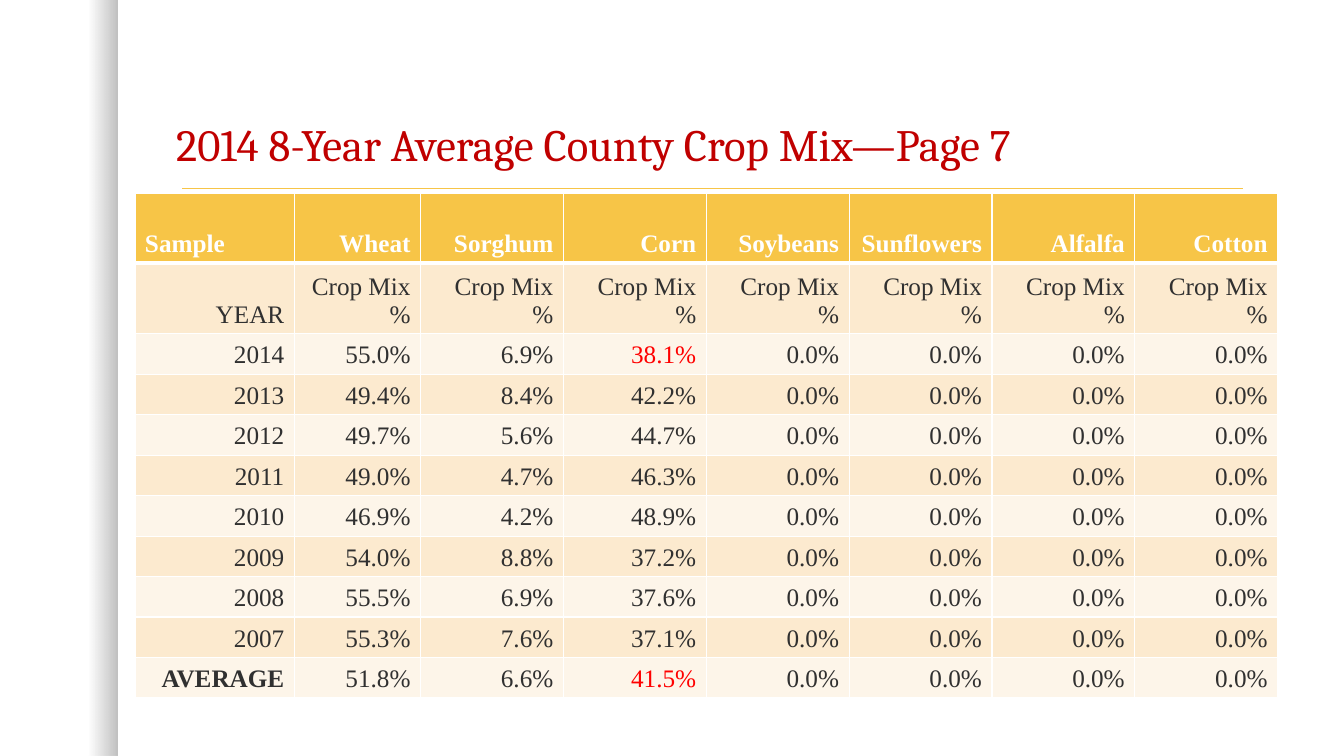
from lxml.etree import SubElement
from pptx import Presentation
from pptx.dml.color import RGBColor
from pptx.enum.shapes import MSO_CONNECTOR as Connector, MSO_SHAPE as Shape
from pptx.enum.text import MSO_ANCHOR as Anchor, PP_ALIGN as Align
from pptx.oxml.ns import qn
from pptx.util import Cm, Pt

TITLE = "2014 8-Year Average County Crop Mix—Page 7"
CROPS = ["Wheat", "Sorghum", "Corn", "Soybeans", "Sunflowers", "Alfalfa", "Cotton"]
MIXES = [
    ("2014", "55.0%", "6.9%", "38.1%"),
    ("2013", "49.4%", "8.4%", "42.2%"),
    ("2012", "49.7%", "5.6%", "44.7%"),
    ("2011", "49.0%", "4.7%", "46.3%"),
    ("2010", "46.9%", "4.2%", "48.9%"),
    ("2009", "54.0%", "8.8%", "37.2%"),
    ("2008", "55.5%", "6.9%", "37.6%"),
    ("2007", "55.3%", "7.6%", "37.1%"),
    ("AVERAGE", "51.8%", "6.6%", "41.5%"),
]
UNGROWN = ["0.0%"] * 4
ROWS = [
    ["Sample", *CROPS],
    ["YEAR"] + ["Crop Mix %"] * len(CROPS),
    *([*mix, *UNGROWN] for mix in MIXES),
]
HIGHLIGHTS = {"38.1%", "41.5%"}
BOLD_LABELS = {"AVERAGE"}

COLUMN_WIDTHS = [4.02, 3.18] + [3.6] * 6
ROW_HEIGHTS = [1.75] * 2 + [1.02] * len(MIXES)
TABLE_LEFT, TABLE_TOP = 3.4, 4.88

GOLD, CREAM, IVORY = "F7C547", "FCEACF", "FDF5E9"
WHITE, BLACK, INK, RED, CRIMSON = "FFFFFF", "000000", "303030", "FF0000", "C00000"


def color(value):
    return RGBColor.from_string(value)


def write(frame, text, size=18, font="Times New Roman", ink=INK, bold=False,
          align=Align.RIGHT, spacing=None):
    frame.word_wrap = True
    para = frame.paragraphs[0]
    para.alignment = align
    para.line_spacing = spacing
    span = para.add_run()
    span.text = text
    span.font.size = Pt(size)
    span.font.name = font
    span.font.bold = bold
    span.font.color.rgb = color(ink)


def add_borders(cell, **widths):
    properties = cell._tc.get_or_add_tcPr()
    for side, width in widths.items():
        line = SubElement(properties, qn(f"a:ln{side}"), w=str(Pt(width)))
        fill = SubElement(line, qn("a:solidFill"))
        SubElement(fill, qn("a:srgbClr"), val=WHITE)


def add_edge_shade(page):
    shade = page.shapes.add_shape(Shape.RECTANGLE, 0, 0, Cm(2.95), Cm(19.05))
    shade.shadow.inherit = False
    shade.line.fill.background()
    shade.fill.gradient()
    shade.fill.gradient_angle = 0
    for stop, position, alpha in zip(shade.fill.gradient_stops, (0.75, 1), (0, 25)):
        stop.position = position
        stop.color.rgb = color(BLACK)
    tones = shade._element.spPr.iter(qn("a:srgbClr"))
    for tone, alpha in zip(list(tones), (0, 25)):
        SubElement(tone, qn("a:alpha"), val=str(alpha * 1000))


def add_title(page):
    rule = page.shapes.add_connector(
        Connector.STRAIGHT, Cm(4.6), Cm(4.75), Cm(31.32), Cm(4.75))
    rule.line.color.rgb = color(GOLD)
    rule.line.width = Pt(1)
    SubElement(rule._element.spPr, qn("a:effectLst"))
    box = page.shapes.add_textbox(Cm(4.19), Cm(1.02), Cm(27.36), Cm(3.43))
    box.text_frame.vertical_anchor = Anchor.BOTTOM
    write(box.text_frame, TITLE, size=32, font="Cambria", ink=CRIMSON,
          align=Align.LEFT, spacing=0.9)


def add_crop_table(page):
    table = page.shapes.add_table(
        len(ROWS), len(COLUMN_WIDTHS), Cm(TABLE_LEFT), Cm(TABLE_TOP),
        Cm(sum(COLUMN_WIDTHS)), Cm(sum(ROW_HEIGHTS))).table
    for column, width in zip(table.columns, COLUMN_WIDTHS):
        column.width = Cm(width)
    for row, height in zip(table.rows, ROW_HEIGHTS):
        row.height = Cm(height)
    for row, values in enumerate(ROWS):
        header = row == 0
        band = GOLD if header else CREAM if row % 2 else IVORY
        for column, value in enumerate(values):
            cell = table.cell(row, column)
            add_borders(cell, L=1, R=1, T=3 if row == 1 else 1, B=3 if header else 1)
            cell.fill.solid()
            cell.fill.fore_color.rgb = color(band)
            cell.vertical_anchor = Anchor.BOTTOM
            ink = WHITE if header else RED if value in HIGHLIGHTS else INK
            write(cell.text_frame, value, ink=ink,
                  bold=header or value in BOLD_LABELS,
                  align=Align.LEFT if header and column == 0 else Align.RIGHT)


def main():
    deck = Presentation()
    deck.slide_width, deck.slide_height = Cm(33.87), Cm(19.05)
    page = deck.slides.add_slide(deck.slide_layouts[6])
    page.background.fill.solid()
    page.background.fill.fore_color.rgb = color(WHITE)
    add_edge_shade(page)
    add_title(page)
    add_crop_table(page)
    deck.save("out.pptx")


if __name__ == "__main__":
    main()
